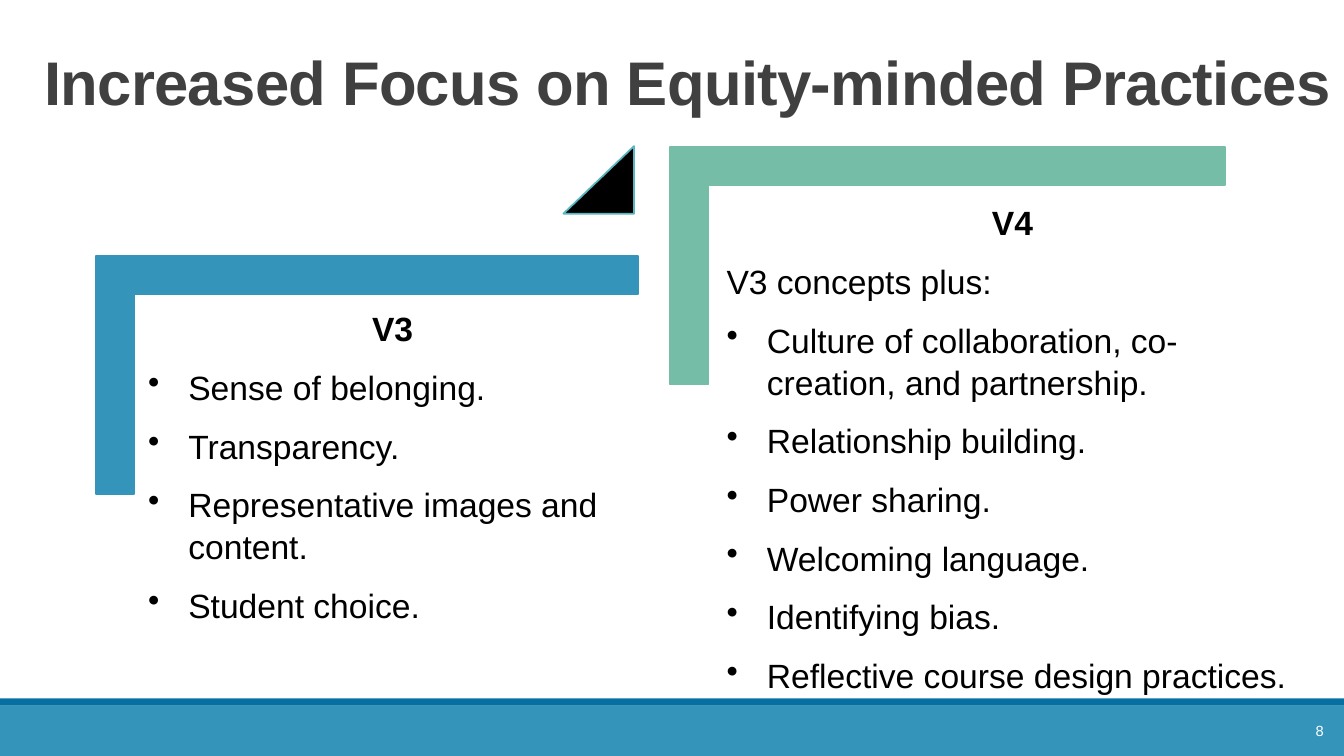
import pptx
import pptx.util
import pptx.dml.color
import pptx.enum.shapes
import pptx.enum.text
import pptx.oxml
import pptx.oxml.ns

COLUMNS, ROWS = 160, 90
UNIT = pptx.util.Inches(7.5) / ROWS
COLORS = {
    "blue": "3494BA",
    "deep": "0770A3",
    "green": "75BDA7",
    "teal": "58B6C0",
    "title": "404040",
    "black": "000000",
    "white": "FFFFFF",
}
SHAPES = pptx.enum.shapes.MSO_SHAPE
ALIGN = pptx.enum.text.PP_ALIGN
MIDDLE = pptx.enum.text.MSO_ANCHOR.MIDDLE
CONCEPTS = [
    {
        "box": (11.4, 30.48, 64.56, 28.32),
        "text_box": (5.04, 4.8, 60.6, 37.32),
        "color": "blue",
        "heading": "V3",
        "intro": [],
        "bullets": [
            "Sense of belonging.",
            "Transparency.",
            "Representative images and content.",
            "Student choice.",
        ],
    },
    {
        "box": (79.74, 17.46, 66.12, 28.32),
        "text_box": (5.58, 5.22, 70.44, 37.8),
        "color": "green",
        "heading": "V4",
        "intro": ["V3 concepts plus:"],
        "bullets": [
            "Culture of collaboration, co-creation, and partnership.",
            "Relationship building.",
            "Power sharing.",
            "Welcoming language.",
            "Identifying bias.",
            "Reflective course design practices.",
        ],
    },
]


def apply(target, values):
    for name, value in values.items():
        setattr(target, name, value)


def color(name):
    return pptx.dml.color.RGBColor.from_string(COLORS[name])


def grid(*lengths):
    return [round(length * UNIT) for length in lengths]


def add_block(page, kind, box, fill, line=None):
    block = page.shapes.add_shape(kind, *grid(*box))
    block.shadow.inherit = False
    block.fill.solid()
    block.fill.fore_color.rgb = color(fill)
    if line:
        block.line.color.rgb = color(line)
        block.line.width = pptx.util.Pt(1.25)
    else:
        block.line.fill.background()
    return block


def add_frame(page, box, values):
    frame = page.shapes.add_textbox(*grid(*box)).text_frame
    apply(frame, {"word_wrap": True, **values})
    return frame


def write(para, text, size, ink, bold=False, **values):
    apply(para, values)
    span = para.add_run()
    span.text = text
    apply(span.font, {"name": "Arial", "size": pptx.util.Pt(size), "bold": bold})
    span.font.color.rgb = color(ink)
    return span


def set_indent(para, bullet):
    properties = para._p.get_or_add_pPr()
    margin = pptx.util.Inches(0.4)
    properties.set("marL", str(margin))
    properties.set("indent", str(-margin))
    if bullet:
        mark = pptx.oxml.parse_xml(
            f'<a:buChar {pptx.oxml.ns.nsdecls("a")} char="•"/>')
        properties.append(mark)


def make_corner(block, thickness):
    geometry = block._element.spPr.find(pptx.oxml.ns.qn("a:prstGeom"))
    geometry.set("prst", "corner")
    guides = geometry.find(pptx.oxml.ns.qn("a:avLst"))
    for name in ("adj1", "adj2"):
        guides.append(pptx.oxml.parse_xml(
            f'<a:gd {pptx.oxml.ns.nsdecls("a")} name="{name}" '
            f'fmla="val {thickness}"/>'))


def add_title(page, box):
    frame = add_frame(page, box, {"vertical_anchor": MIDDLE})
    span = write(frame.paragraphs[0], "Increased Focus on Equity-minded Practices",
                 44, "title", True, line_spacing=0.85)
    span.font._element.set("spc", "-50")


def add_concept(page, box, concept):
    left, top, width, height = box
    shift = (width - height) / 2
    bracket = add_block(page, SHAPES.RECTANGLE,
                        (left + shift, top - shift, height, width),
                        concept["color"], concept["color"])
    bracket.rotation = 90
    make_corner(bracket, 16100)

    text_left, text_top, *size = concept["text_box"]
    margin = pptx.util.Inches(0.1)
    sides = ("left", "top", "right", "bottom")
    frame = add_frame(page, (left + text_left, top + text_top, *size),
                      {f"margin_{side}": margin for side in sides})
    spacing = {"space_after": pptx.util.Pt(12), "line_spacing": 1.04}
    write(frame.paragraphs[0], concept["heading"], 24, "black", True,
          alignment=ALIGN.CENTER, **spacing)
    for text in concept["intro"] + concept["bullets"]:
        para = frame.add_paragraph()
        set_indent(para, text in concept["bullets"])
        write(para, text, 24, "black", **spacing)


def add_footer(page, box):
    left, top, width, height = box
    stripe = 0.84
    add_block(page, SHAPES.RECTANGLE, box, "blue")
    add_block(page, SHAPES.RECTANGLE, (left, top - stripe, width, stripe), "deep")
    frame = add_frame(page, (left + width - 18.4, top + 0.6, 17.16, 4.8),
                      {"vertical_anchor": MIDDLE})
    write(frame.paragraphs[0], "8", 10.5, "white", alignment=ALIGN.RIGHT)


def main():
    deck = pptx.Presentation()
    apply(deck, {"slide_width": round(COLUMNS * UNIT),
                 "slide_height": round(ROWS * UNIT)})
    page = deck.slides.add_slide(deck.slide_layouts[6])
    add_footer(page, (0, 84, COLUMNS, 6))
    add_title(page, (4.08, 3.72, 155.92, 13.32))
    for concept in CONCEPTS:
        add_concept(page, concept["box"], concept)
    step = add_block(page, SHAPES.ISOSCELES_TRIANGLE,
                     (67.08, 17.4, 8.4, 8.04), "black", "teal")
    step.adjustments[0] = 1
    deck.save("out.pptx")


if __name__ == "__main__":
    main()
